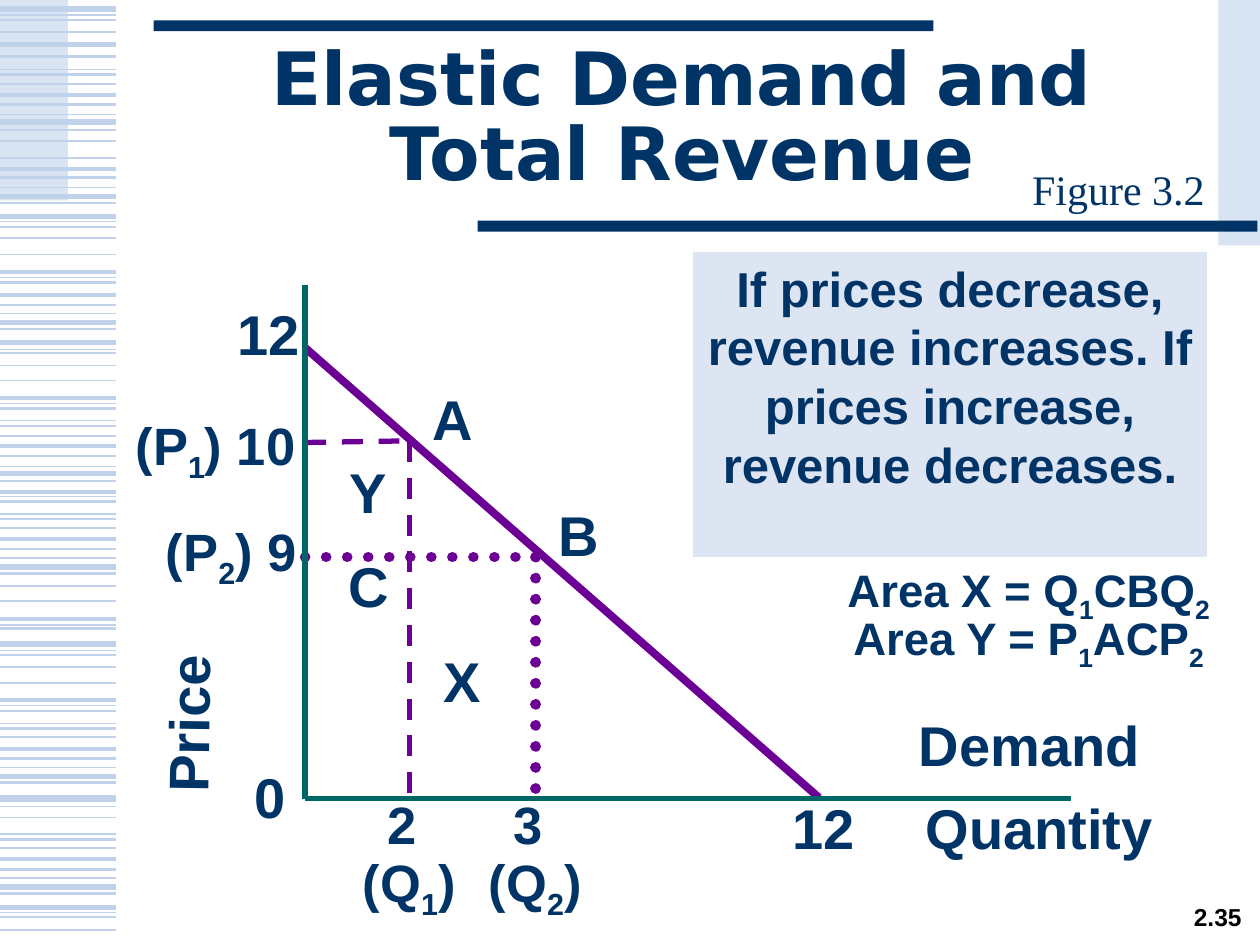
from lxml import etree
from pptx import Presentation
from pptx.dml.color import RGBColor
from pptx.enum.dml import MSO_LINE as Dash
from pptx.enum.shapes import MSO_CONNECTOR, MSO_SHAPE
from pptx.enum.text import MSO_ANCHOR as Anchor, MSO_AUTO_SIZE as Fit, PP_ALIGN
from pptx.oxml.ns import qn
from pptx.util import Cm, Pt

NAVY = RGBColor(0x00, 0x33, 0x66)
PALE = RGBColor(0xD9, 0xE4, 0xF3)
PANEL = RGBColor(0xDD, 0xE5, 0xF3)
STRIPE = RGBColor(0xC0, 0xD2, 0xEA)
PURPLE = RGBColor(0x6D, 0x00, 0x94)
GREEN = RGBColor(0x00, 0x66, 0x66)
BLACK = RGBColor(0x00, 0x00, 0x00)

deck = Presentation()
deck.slide_width, deck.slide_height = Cm(25.4), Cm(19.05)
page = deck.slides.add_slide(deck.slide_layouts[6])


def add_line(x1, y1, x2, y2, color, width, dash=None):
    line = page.shapes.add_connector(
        MSO_CONNECTOR.STRAIGHT, Cm(x1), Cm(y1), Cm(x2), Cm(y2))
    line.line.color.rgb = color
    line.line.width = Pt(width)
    if dash:
        line.line.dash_style = dash
    if dash == Dash.ROUND_DOT:
        line.line._get_or_add_ln().set("cap", "rnd")
    etree.SubElement(line._element.spPr, qn("a:effectLst"))


def add_text(lines, x, y, w, h, size, font="Arial", color=NAVY, bold=True,
             spacing=None, gap=0, anchor=Anchor.TOP, wrap=True, fit=Fit.NONE):
    """Centred text box; every second piece between underscores is a subscript."""
    box = page.shapes.add_textbox(Cm(x), Cm(y), Cm(w), Cm(h))
    frame = box.text_frame
    frame.word_wrap, frame.auto_size, frame.vertical_anchor = wrap, fit, anchor
    for number, line in enumerate(lines):
        para = frame.add_paragraph() if number else frame.paragraphs[0]
        para.alignment = PP_ALIGN.CENTER
        if spacing:
            para.line_spacing = spacing
        if number and gap:
            para.space_before = Pt(gap)
        for position, piece in enumerate(line.split("_")):
            if not piece:
                continue
            span = para.add_run()
            span.text = piece
            span.font.name, span.font.size = font, Pt(size)
            span.font.bold, span.font.color.rgb = bold, color
            if position % 2:
                span.font._element.set("baseline", "-25000")
    return box


# Background blocks, title bars and the message panel
blocks = [
    (0, 0, 1.37, 4.04, PALE),
    (3.1, 0.41, 15.72, 0.22, NAVY),
    (24.56, 0, 0.84, 4.95, PALE),
    (9.63, 4.45, 15.72, 0.22, NAVY),
    (13.97, 5.08, 10.36, 6.15, PANEL),
]
for x, y, w, h, color in blocks:
    block = page.shapes.add_shape(MSO_SHAPE.RECTANGLE, Cm(x), Cm(y), Cm(w), Cm(h))
    block.shadow.inherit = False
    block.fill.solid()
    block.fill.fore_color.rgb = color
    block.line.fill.background()

# The last block is the panel and carries the message
panel_frame = block.text_frame
panel_frame.word_wrap = True
panel_frame.vertical_anchor = Anchor.TOP
panel_frame.text = ("If prices decrease, revenue increases. "
                    "If prices increase, revenue decreases.")
message = panel_frame.paragraphs[0]
message.alignment = PP_ALIGN.CENTER
message.runs[0].font.name, message.runs[0].font.size = "Arial", Pt(28)
message.runs[0].font.bold, message.runs[0].font.color.rgb = True, NAVY

# Stripes on the left edge: line width, then heights
stripes = {
    3: [0.18, 0.89, 2.46, 3.96, 4.37, 6.5, 6.91, 9.55, 11.43, 12.98, 15.65,
        16.08, 17.88, 18.29],
    2.25: [1.91, 3.4, 5.49, 5.94, 8.03, 8.99, 9.91, 10.87, 12.47, 14.12,
           15.09, 17.32],
    1.5: [1.14, 1.5, 2.11, 2.62, 3.58, 4.09, 5.69, 6.15, 6.63, 8.23, 8.59,
          9.19, 9.7, 10.11, 10.46, 11.07, 11.56, 12.67, 14.33, 14.68, 15.29,
          15.77, 16.92, 17.53, 18.01],
    1: [0.41, 0.64, 1.7, 2.84, 3.18, 4.57, 4.8, 5.13, 7.11, 7.37, 7.67, 8.79,
        10.64, 11.81, 12.12, 13.21, 13.44, 13.77, 14.86, 16.26, 16.48, 16.81,
        17.09, 18.49, 18.75],
    0.75: [0.3, 1.4, 2.31, 3.78, 4.47, 5.59, 6.32, 7.04, 8.13, 8.48, 9.4,
           10.01, 10.36, 11.25, 12.6, 13.11, 14.22, 14.58, 15.47, 16.15, 17.7,
           18.39],
}
for width, heights in stripes.items():
    for y in heights:
        add_line(0, y, 2.34, y, STRIPE, width)

# Title, figure number and page number
add_text(["Elastic Demand and Total Revenue"], 3.18, 0.84, 21.13, 3.18, 42,
         font="DejaVu Sans", spacing=0.85, anchor=Anchor.MIDDLE)
add_text(["Figure 3.2"], 20.32, 3.38, 4.45, 0.84, 24, font="Times New Roman",
         bold=False, anchor=Anchor.MIDDLE, wrap=False)
add_text(["2.35"], 23.7, 18.21, 1.7, 0.69, 14, color=BLACK, spacing=0.7,
         anchor=Anchor.MIDDLE, wrap=False)

# Demand curve and the guides to points A and B
origin_x, origin_y = 6.15, 16.1
add_line(origin_x, 7.01, 16.51, 16.08, PURPLE, 4.5)
add_line(origin_x, 8.92, 8.05, 8.89, PURPLE, 3, Dash.DASH)
add_line(8.26, 8.89, 8.26, 16.08, PURPLE, 3, Dash.DASH)
add_line(origin_x, 11.23, 10.8, 11.23, PURPLE, 6, Dash.ROUND_DOT)
add_line(10.8, 11.23, 10.8, 16.08, PURPLE, 6, Dash.ROUND_DOT)

# Axes
add_line(origin_x, 5.74, origin_x, origin_y, GREEN, 3)
add_line(origin_x, origin_y, 21.59, origin_y, GREEN, 3)

# Point, area and axis labels
labels = [
    ("A", 8.46, 7.62, 1.07), ("B", 11, 9.96, 1.27), ("X", 8.69, 12.9, 1.27),
    ("Y", 6.78, 9.09, 1.27), ("C", 6.78, 11, 1.27),
    ("Quantity", 17.78, 15.88, 6.35), ("Demand", 17.58, 14.2, 6.35),
    ("0", 4.88, 15.24, 0.84), ("12", 15.44, 15.88, 2.34),
    ("12", 4.24, 5.92, 2.34),
]
for text, x, y, w in labels:
    add_text([text], x, y, w, 1.6, 32, fit=Fit.SHAPE_TO_FIT_TEXT)
price = add_text(["Price"], 1.65, 13.79, 4.24, 1.6, 32, fit=Fit.SHAPE_TO_FIT_TEXT)
price.rotation = 270.8

# Prices and quantities with subscripts
add_text(["(P_1_) 10"], 2.34, 8.2, 4.01, 1.52, 30, fit=Fit.SHAPE_TO_FIT_TEXT)
add_text(["(P_2_) 9"], 2.97, 10.34, 3.38, 1.52, 30, fit=Fit.SHAPE_TO_FIT_TEXT)
for index, value in enumerate(("2 ", "3 ")):
    add_text([value, f"(Q_{index + 1}_)"], 6.98 + 2.54 * index, 16.08, 2.54, 2.34,
             30, spacing=0.8, gap=1.5, fit=Fit.SHAPE_TO_FIT_TEXT)

# Area definitions
add_text(["Area X = Q_1_CBQ_2_", "Area Y = P_1_ACP_2_"], 16.71, 11.43, 8.05, 1.9,
         26, spacing=0.7, gap=2.6, fit=Fit.SHAPE_TO_FIT_TEXT)

deck.save("out.pptx")
